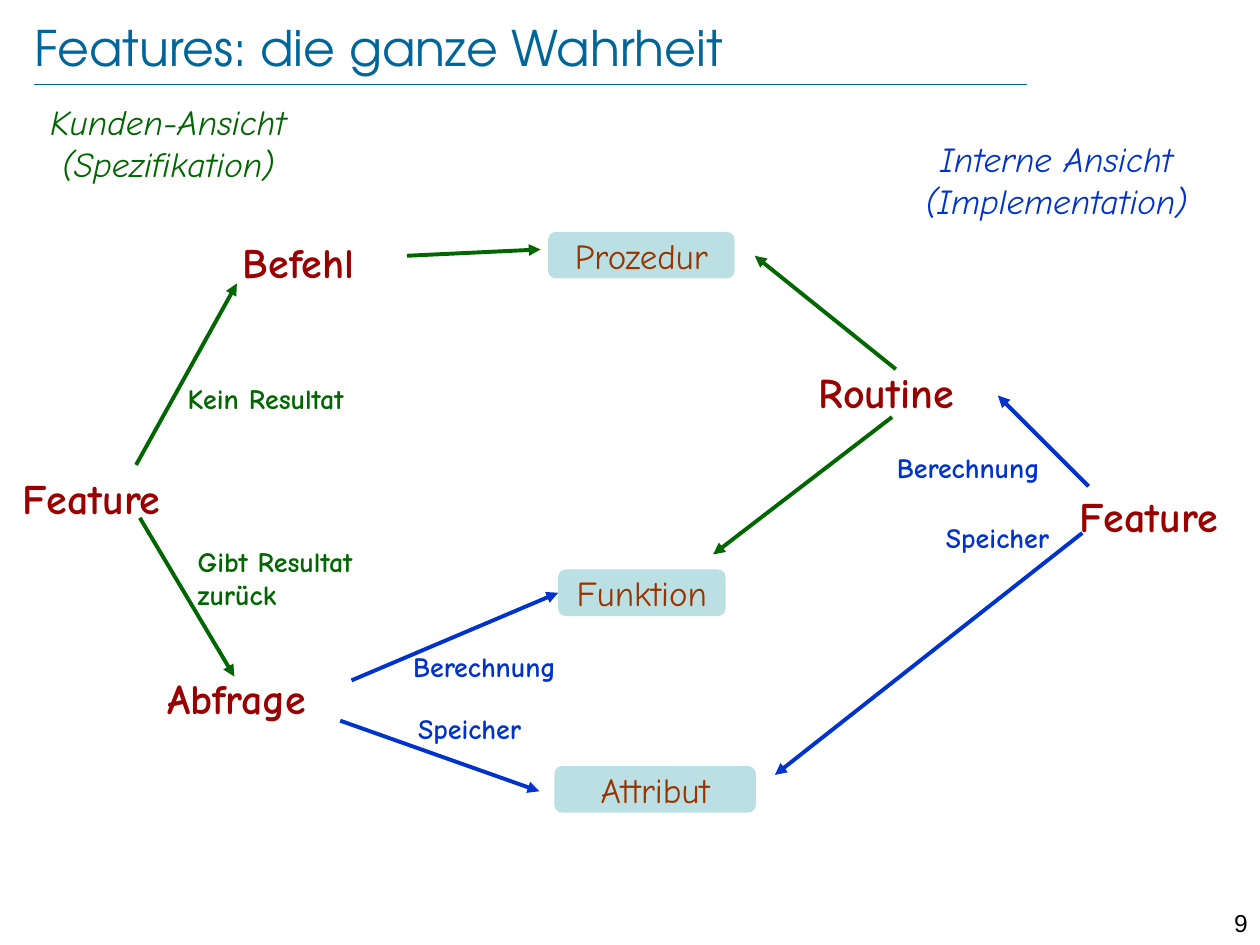
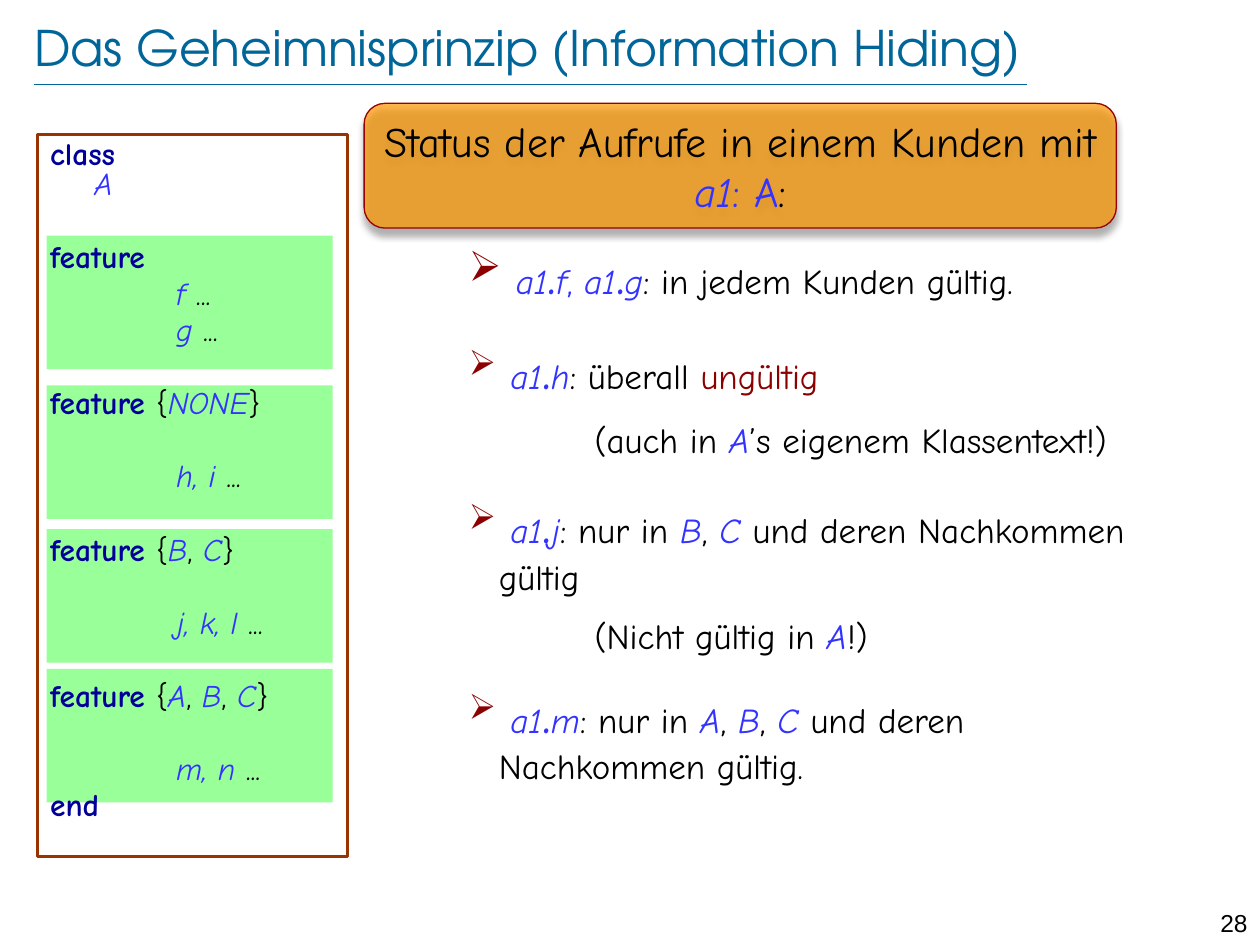
import pptx
import pptx.util
import pptx.oxml
import pptx.oxml.ns
from lxml import etree
from pptx.dml.color import RGBColor
from pptx.enum.shapes import MSO_CONNECTOR, MSO_SHAPE
from pptx.enum.text import MSO_ANCHOR, MSO_AUTO_SIZE, PP_ALIGN
from pptx.oxml.ns import qn
from pptx.util import Inches, Pt

BODY_FONT = "Comic Neue"
TITLE_FONT = "TeX Gyre Adventor"
BLACK = RGBColor(0x00, 0x00, 0x00)
TEAL = RGBColor(0x00, 0x66, 0x99)
RED = RGBColor(0x99, 0x00, 0x00)
DARK_RED = RGBColor(0x8B, 0x00, 0x00)
BROWN = RGBColor(0x99, 0x33, 0x00)
GREEN = RGBColor(0x00, 0x66, 0x00)
BLUE = RGBColor(0x00, 0x33, 0xCC)
NAVY = RGBColor(0x00, 0x00, 0x99)
CODE_BLUE = RGBColor(0x33, 0x33, 0xFF)
PALE_TEAL = RGBColor(0xBB, 0xE0, 0xE3)
PALE_GREEN = RGBColor(0x99, 0xFF, 0x99)
ORANGE = RGBColor(0xFF, 0x99, 0x00)


def add_text(p, text, size=20, color=BLACK, bold=False, italic=False, font=BODY_FONT):
    """Append text to paragraph p; a newline becomes a line break."""
    for i, part in enumerate(text.split("\n")):
        if i:
            p.add_line_break()
        r = p.add_run()
        r.text = part
        r.font.name, r.font.size = font, Pt(size)
        r.font.bold, r.font.italic = bold, italic
        r.font.color.rgb = color


def add_line(s, start, end, color, width, arrow=False):
    x1, y1, x2, y2 = [Inches(v) for v in (*start, *end)]
    line = s.shapes.add_connector(MSO_CONNECTOR.STRAIGHT, x1, y1, x2, y2)
    line.line.color.rgb = color
    line.line.width = Pt(width)
    if arrow:
        etree.SubElement(line.line._get_or_add_ln(), qn("a:tailEnd"), type="triangle")
    etree.SubElement(line._element.spPr, qn("a:effectLst"))
    return line


prs = pptx.Presentation()
prs.slide_width, prs.slide_height = Inches(10), Inches(7.5)

# Title, rule and page number
slides = []
for title, number in [("Features: die ganze Wahrheit", "9"),
                      ("Das Geheimnisprinzip (Information Hiding)", "28")]:
    s = prs.slides.add_slide(prs.slide_layouts[5])
    sp = s.shapes.title
    sp.left, sp.top, sp.width, sp.height = Inches(0.27), Inches(0.13), Inches(8.69), Inches(0.48)
    tf = sp.text_frame
    tf.margin_left = tf.margin_right = tf.margin_top = tf.margin_bottom = 0
    tf.auto_size = MSO_AUTO_SIZE.NONE
    tf.vertical_anchor = MSO_ANCHOR.MIDDLE
    tf.paragraphs[0].alignment = PP_ALIGN.LEFT
    add_text(tf.paragraphs[0], title, size=28, color=TEAL, font=TITLE_FONT)
    add_line(s, (0.27, 0.67), (8.15, 0.67), TEAL, 0.25)
    sp = s.shapes.add_textbox(Inches(9.45), Inches(7.16), Inches(0.55), Inches(0.24))
    p = sp.text_frame.paragraphs[0]
    sp.text_frame.word_wrap = True
    p.alignment = PP_ALIGN.RIGHT
    add_text(p, number, size=14, font="Arial")
    slides.append(s)

# Slide 1: feature diagram
s = slides[0]
term = dict(size=24, color=RED, bold=True)
client_label = dict(size=16, color=GREEN, bold=True)
internal_label = dict(size=16, color=BLUE, bold=True)
for text, x, y, w, h, style in [
    ("Feature", 0.08, 3.7, 1.5, 0.5, term),
    ("Feature", 8.47, 3.84, 1.53, 0.5, term),
    ("Befehl", 1.83, 1.83, 1.97, 0.5, term),
    ("Abfrage", 1.23, 5.29, 1.71, 0.5, term),
    ("Routine", 6.4, 2.86, 1.6, 0.5, term),
    ("Kein Resultat", 1.39, 2.98, 1.64, 0.37, client_label),
    ("Gibt Resultat zurück", 1.47, 4.27, 1.84, 0.64, client_label),
    ("Speicher", 3.22, 5.6, 1.17, 0.37, internal_label),
    ("Berechnung", 3.18, 5.11, 1.49, 0.37, internal_label),
    ("Speicher", 7.41, 4.08, 1.17, 0.37, internal_label),
    ("Berechnung", 7.02, 3.53, 1.49, 0.37, internal_label),
]:
    sp = s.shapes.add_textbox(Inches(x), Inches(y), Inches(w), Inches(h))
    sp.text_frame.word_wrap = True
    add_text(sp.text_frame.paragraphs[0], text, **style)

for text, x, y, w, color in [
    ("Kunden-Ansicht\n(Spezifikation)", 0.34, 0.8, 1.99, GREEN),
    ("Interne Ansicht\n(Implementation)", 7.22, 1.09, 2.33, BLUE),
]:
    sp = s.shapes.add_textbox(Inches(x), Inches(y), Inches(w), Inches(0.67))
    tf = sp.text_frame
    tf.word_wrap = True
    tf.margin_left = tf.margin_right = tf.margin_top = tf.margin_bottom = 0
    tf.paragraphs[0].alignment = PP_ALIGN.CENTER
    add_text(tf.paragraphs[0], text, color=color, italic=True)

kinds = {}
for text, x, y, w in [("Prozedur", 4.35, 1.84, 1.48), ("Funktion", 4.43, 4.52, 1.33),
                      ("Attribut", 4.4, 6.08, 1.6)]:
    sp = s.shapes.add_shape(MSO_SHAPE.ROUNDED_RECTANGLE, Inches(x), Inches(y), Inches(w), Inches(0.37))
    sp.shadow.inherit = False
    sp.fill.solid()
    sp.fill.fore_color.rgb = PALE_TEAL
    sp.line.fill.background()
    tf = sp.text_frame
    tf.margin_left = tf.margin_right = tf.margin_top = tf.margin_bottom = 0
    tf.vertical_anchor = MSO_ANCHOR.MIDDLE
    tf.paragraphs[0].alignment = PP_ALIGN.CENTER
    add_text(tf.paragraphs[0], text, color=BROWN)
    kinds[text] = sp

for start, end, color in [
    ((1.08, 3.69), (1.88, 2.25), GREEN),
    ((1.11, 4.11), (1.86, 5.37), GREEN),
    ((3.23, 2.03), (4.29, 1.98), GREEN),
    ((7.11, 2.93), (5.99, 2.03), GREEN),
    ((7.08, 3.31), (5.66, 4.4), GREEN),
    ((2.7, 5.72), (4.28, 6.28), BLUE),
    ((8.59, 4.23), (6.15, 6.15), BLUE),
    ((8.64, 3.86), (7.92, 3.14), BLUE),
]:
    add_line(s, start, end, color, 2.25, arrow=True)
to_function = add_line(s, (2.79, 5.4), (4.43, 4.71), BLUE, 2.25, arrow=True)
to_function.end_connect(kinds["Funktion"], 1)

# Slide 2: call status banner
s = slides[1]
plain = dict()
name = dict(color=CODE_BLUE, italic=True)
sp = s.shapes.add_shape(MSO_SHAPE.ROUNDED_RECTANGLE, Inches(2.89), Inches(0.82), Inches(5.97), Inches(0.99))
sp.fill.solid()
sp.fill.fore_color.rgb = ORANGE
color_node = sp._element.spPr.find(qn("a:solidFill"))[0]
etree.SubElement(color_node, qn("a:alpha"), val="70000")
sp.line.color.rgb = RED
sp.line.width = Pt(0.75)
sp.shadow.inherit = False
shadow = etree.SubElement(sp._element.spPr.find(qn("a:effectLst")), qn("a:outerShdw"),
                          blurRad=str(Pt(4)), dist=str(Pt(4)), dir="5400000", rotWithShape="0")
shadow_color = etree.SubElement(shadow, qn("a:srgbClr"), val="000000")
etree.SubElement(shadow_color, qn("a:alpha"), val="43000")
sp.text_frame.vertical_anchor = MSO_ANCHOR.MIDDLE
p = sp.text_frame.paragraphs[0]
p.alignment = PP_ALIGN.CENTER
for text, style in [("Status der Aufrufe in einem Kunden mit ", plain), ("a1", name),
                    (": A", dict(color=CODE_BLUE)), (":", plain)]:
    add_text(p, text, **{**style, "size": 24})

# Class text over its feature blocks
for top in (1.87, 3.06, 4.2, 5.31):
    sp = s.shapes.add_shape(MSO_SHAPE.RECTANGLE, Inches(0.37), Inches(top), Inches(2.27), Inches(1.06))
    sp.shadow.inherit = False
    sp.fill.solid()
    sp.fill.fore_color.rgb = PALE_GREEN
    sp.line.fill.background()

sp = s.shapes.add_shape(MSO_SHAPE.RECTANGLE, Inches(0.3), Inches(1.07), Inches(2.46), Inches(5.73))
sp.shadow.inherit = False
sp.fill.background()
sp.line.color.rgb = BROWN
sp.line.width = Pt(1.5)
tf = sp.text_frame
tf.vertical_anchor = MSO_ANCHOR.TOP
keyword = dict(color=NAVY, bold=True)
TIGHT, GAP = 3.6, 24.5
for i, (indent, before, runs) in enumerate([
    (0, 0, [("class", keyword)]),
    (0.35, 0, [("A", name)]),
    (0, GAP, [("feature", keyword)]),
    (1, TIGHT, [("f", name), (" ...", plain)]),
    (1, TIGHT, [("g", name), (" ...", plain)]),
    (0, GAP, [("feature ", keyword), ("{", plain), ("NONE", name), ("}", plain)]),
    (1, GAP, [("h, i ", name), ("...", plain)]),
    (0, GAP, [("feature ", keyword), ("{", plain), ("B", name), (", ", plain), ("C", name),
              ("}", plain)]),
    (1, GAP, [("j, k, l ", name), ("...", plain)]),
    (0, GAP, [("feature ", keyword), ("{", plain), ("A", name), (", ", plain), ("B", name),
              (", ", plain), ("C", name), ("}", plain)]),
    (1, GAP, [("m, n", name), (" ...", plain)]),
    (0, TIGHT, [("end", keyword)]),
]):
    p = tf.add_paragraph() if i else tf.paragraphs[0]
    p.alignment = PP_ALIGN.LEFT
    p.line_spacing = 0.8
    p.space_before = Pt(before)
    p._p.get_or_add_pPr().set("marL", str(Inches(indent)))
    for text, style in runs:
        add_text(p, text, **{**style, "size": 18})

# Validity of each call
sp = s.shapes.add_textbox(Inches(3.62), Inches(1.84), Inches(6.08), Inches(4.82))
tf = sp.text_frame
tf.word_wrap = True
dot = (".", dict(size=32, color=CODE_BLUE))
for i, (bullet, before, runs) in enumerate([
    (True, 0, [(" ", dict(size=24)), ("a1", name), dot, ("f", name), (", ", dict(color=CODE_BLUE)),
               ("a1", name), dot, ("g", name), (": in jedem Kunden gültig.", plain)]),
    (True, 16, [(" ", plain), ("a1", name), dot, ("h", name), (": überall ", plain),
                ("ungültig", dict(color=DARK_RED))]),
    (False, 10, [("(auch in ", plain), ("A", name), ("’s eigenem Klassentext!)", plain)]),
    (True, 16, [(" ", plain), ("a1", name), dot, ("j", name), (": nur in ", plain), ("B", name),
                (", ", plain), ("C", name), (" und deren Nachkommen\ngültig", plain)]),
    (False, 10, [("(Nicht gültig in ", plain), ("A", name), ("!)", plain)]),
    (True, 12, [(" ", plain), ("a1", name), dot, ("m", name), (": nur in ", plain), ("A", name),
                (", ", plain), ("B", name), (", ", plain), ("C", name),
                (" und deren\nNachkommen gültig.", plain)]),
]):
    p = tf.add_paragraph() if i else tf.paragraphs[0]
    p.space_before = Pt(before)
    pPr = p._p.get_or_add_pPr()
    pPr.set("marL", str(Inches(0.24 if bullet else 1)))
    if bullet:
        pPr.set("indent", str(-Inches(0.24)))
        bullet_color = etree.SubElement(pPr, qn("a:buClr"))
        etree.SubElement(bullet_color, qn("a:srgbClr"), val=str(DARK_RED))
        etree.SubElement(pPr, qn("a:buChar"), char="➢")
    for text, style in runs:
        add_text(p, text, **style)

prs.save("out.pptx")
